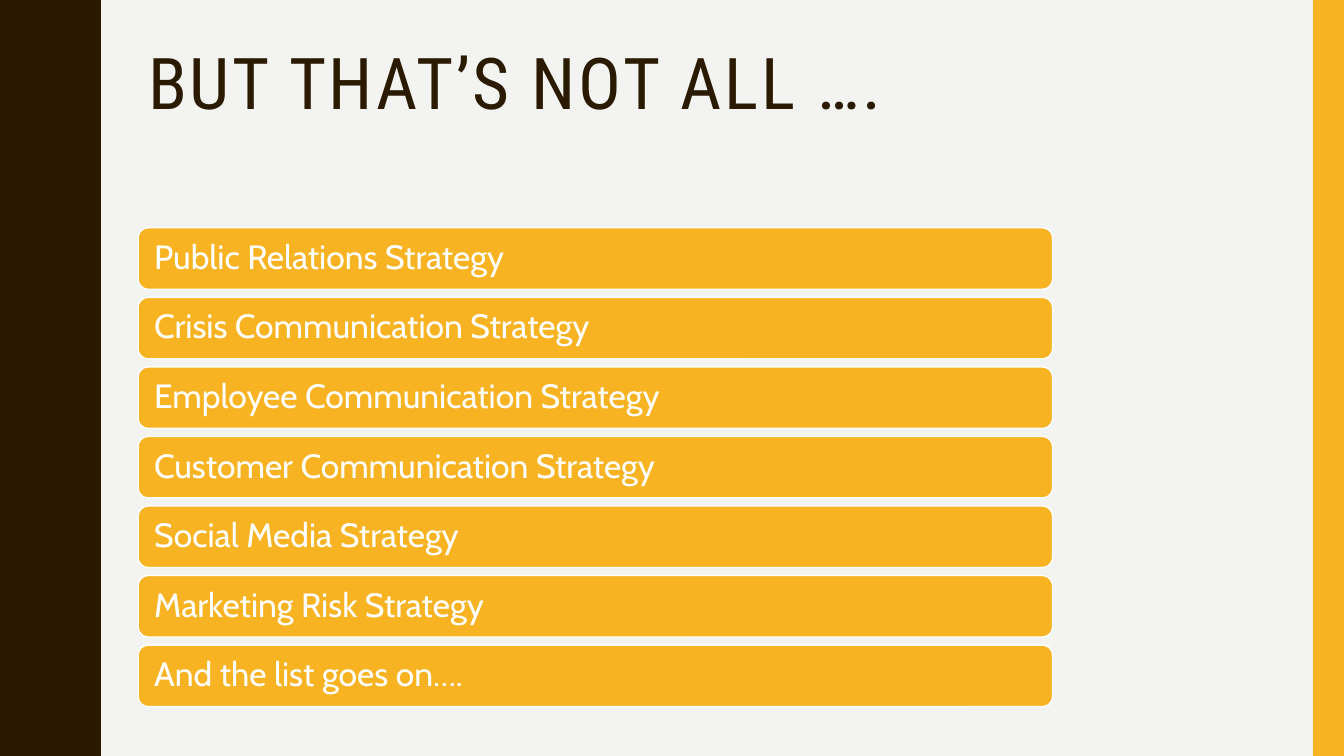
from dataclasses import dataclass

from pptx import Presentation
from pptx.dml.color import RGBColor
from pptx.enum.shapes import MSO_SHAPE
from pptx.enum.text import MSO_ANCHOR, MSO_AUTO_SIZE, PP_ALIGN
from pptx.shapes.autoshape import Shape
from pptx.slide import Slide
from pptx.util import Inches, Pt

RECT = MSO_SHAPE.RECTANGLE
ROUNDED = MSO_SHAPE.ROUNDED_RECTANGLE
TOP, MIDDLE = MSO_ANCHOR.TOP, MSO_ANCHOR.MIDDLE
LEFT = PP_ALIGN.LEFT
NO_AUTOFIT = MSO_AUTO_SIZE.NONE
TITLE_ONLY = 5

BROWN, AMBER, PAPER, WHITE = "2A1A00", "F8B323", "F3F3F2", "FFFFFF"
SLIDE_W, SLIDE_H = 13.33, 7.5

# Half of one wave as (x, y); the other half mirrors it
WAVE_PERIOD = 1.5
HALF_WAVE = [
    (0.78, 0), (0.78, 0.07), (0.79, 0.14), (0.8, 0.2), (0.81, 0.25),
    (0.83, 0.29), (0.85, 0.33), (0.87, 0.38), (0.89, 0.42), (0.91, 0.46),
    (0.93, 0.5), (0.95, 0.55), (0.96, 0.61), (0.97, 0.68), (0.97, 0.75),
]

STRATEGIES = [
    "Public Relations Strategy",
    "Crisis Communication Strategy",
    "Employee Communication Strategy",
    "Customer Communication Strategy",
    "Social Media Strategy",
    "Marketing Risk Strategy",
    "And the list goes on….",
]
BAR_LEFT, BAR_TOP, BAR_W, BAR_H, BAR_PITCH = 1.37, 2.26, 9.07, 0.61, 0.69


@dataclass(frozen=True)
class TextStyle:
    font: str
    size: float
    color: str
    anchor: MSO_ANCHOR
    inset_x: float
    inset_y: float


TITLE_STYLE = TextStyle("Roboto Condensed", 51, BROWN, TOP, 0.1, 0.05)
BAR_STYLE = TextStyle("Cabin", 24, WHITE, MIDDLE, 0.13, 0.05)


@dataclass(frozen=True)
class Panel:
    kind: MSO_SHAPE
    left: float
    top: float
    width: float
    height: float
    text: str = ""
    outline: str = ""


def rgb(color: str) -> RGBColor:
    return RGBColor.from_string(color)


def paint(shape: Shape, fill: str, outline: str = "") -> None:
    shape.shadow.inherit = False
    shape.fill.solid()
    shape.fill.fore_color.rgb = rgb(fill)
    if outline:
        shape.line.color.rgb = rgb(outline)
        shape.line.width = Pt(1)
    else:
        shape.line.fill.background()


def write(shape: Shape, text: str, style: TextStyle) -> None:
    frame = shape.text_frame
    frame_format = {
        "word_wrap": True,
        "auto_size": NO_AUTOFIT,
        "vertical_anchor": style.anchor,
        "margin_left": Inches(style.inset_x),
        "margin_right": Inches(style.inset_x),
        "margin_top": Inches(style.inset_y),
        "margin_bottom": Inches(style.inset_y),
    }
    for name, value in frame_format.items():
        setattr(frame, name, value)
    paragraph = frame.paragraphs[0]
    paragraph.alignment = LEFT
    paragraph.line_spacing = 0.9
    run = paragraph.add_run()
    run.text = text
    run.font.name = style.font
    run.font.size = Pt(style.size)
    run.font.color.rgb = rgb(style.color)


def draw_panel(slide: Slide, panel: Panel) -> None:
    box = (panel.left, panel.top, panel.width, panel.height)
    shape = slide.shapes.add_shape(panel.kind, *map(Inches, box))
    paint(shape, AMBER, panel.outline)
    if panel.text:
        write(shape, panel.text, BAR_STYLE)


def draw_wavy_edge(slide: Slide) -> None:
    wave = HALF_WAVE + [(x, WAVE_PERIOD - y) for x, y in HALF_WAVE[-2::-1]]
    waves = round(SLIDE_H / WAVE_PERIOD)
    edge = [(x, i * WAVE_PERIOD + y) for i in range(waves) for x, y in wave]
    builder = slide.shapes.build_freeform(0, 0, scale=Inches(1))
    builder.add_line_segments(edge + [(0, SLIDE_H)], close=True)
    paint(builder.convert_to_shape(), BROWN)


def draw_title(slide: Slide, text: str) -> None:
    title = slide.shapes.title
    place = {"left": 1.37, "top": 0.42, "width": 11.13, "height": 1.63}
    for name, value in place.items():
        setattr(title, name, Inches(value))
    write(title, text, TITLE_STYLE)
    # Letter spacing in hundredths of a point
    title.text_frame.paragraphs[0].runs[0].font._element.set("spc", "200")


def main() -> None:
    presentation = Presentation()
    presentation.slide_width = Inches(SLIDE_W)
    presentation.slide_height = Inches(SLIDE_H)
    slide = presentation.slides.add_slide(presentation.slide_layouts[TITLE_ONLY])

    # Background and side decoration
    slide.background.fill.solid()
    slide.background.fill.fore_color.rgb = rgb(PAPER)
    draw_wavy_edge(slide)
    draw_panel(slide, Panel(RECT, 13.02, 0, 0.31, SLIDE_H))

    # Title and strategy list
    draw_title(slide, "BUT THAT’S NOT ALL ….")
    for i, strategy in enumerate(STRATEGIES):
        top = BAR_TOP + i * BAR_PITCH
        draw_panel(slide, Panel(ROUNDED, BAR_LEFT, top, BAR_W, BAR_H, strategy, WHITE))

    presentation.save("out.pptx")


if __name__ == "__main__":
    main()
